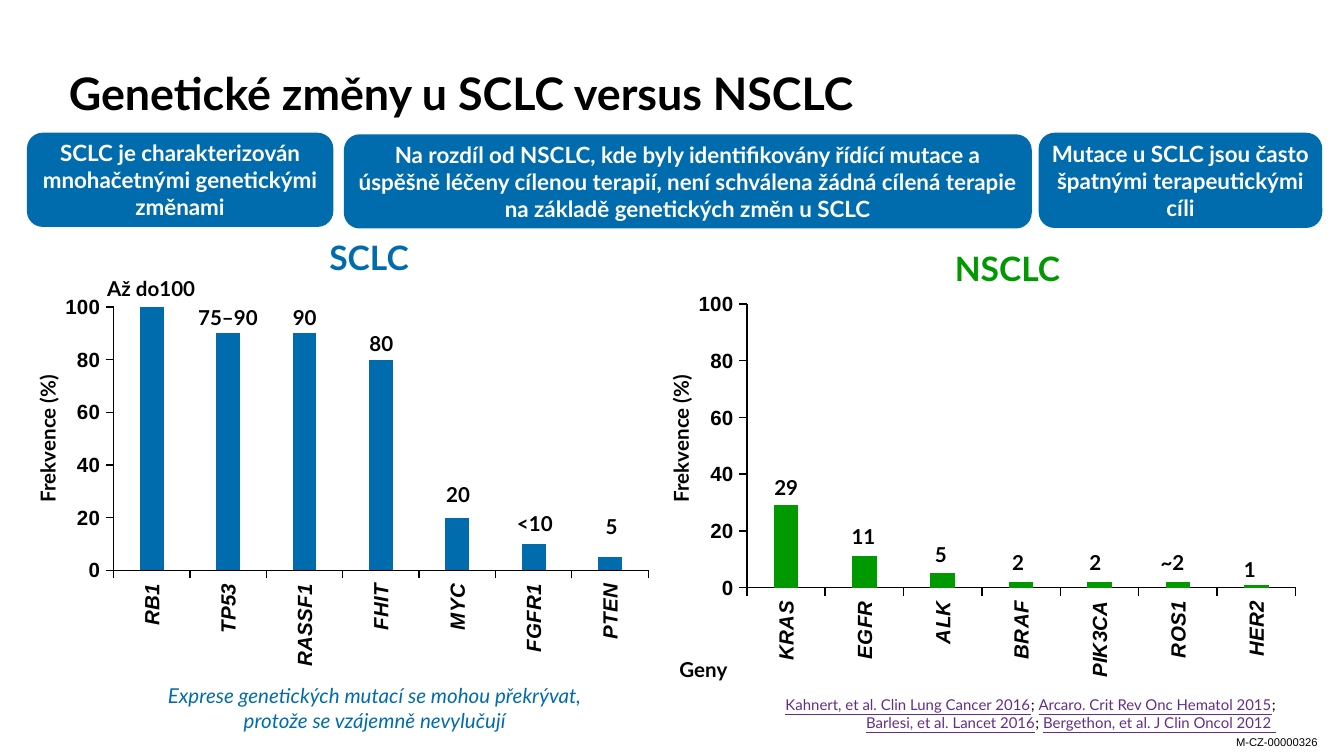
from lxml import etree
from pptx import Presentation
from pptx.chart.data import CategoryChartData
from pptx.dml.color import RGBColor
from pptx.enum import chart as ch, shapes, text
from pptx.oxml import parse_xml
from pptx.oxml.ns import nsdecls, qn
from pptx.util import Cm, Pt

BLUE = RGBColor(0x00, 0x6C, 0xAD)
GREEN = RGBColor(0x00, 0x99, 0x00)
PURPLE = RGBColor(0x64, 0x2D, 0x86)
BLACK = RGBColor(0, 0, 0)
WHITE = RGBColor(255, 255, 255)
CENTER, RIGHT = text.PP_ALIGN.CENTER, text.PP_ALIGN.RIGHT
MIDDLE, BOTTOM = text.MSO_ANCHOR.MIDDLE, text.MSO_ANCHOR.BOTTOM

# Content; every box is left, top, width, height in cm
TITLE = "Genetické změny u SCLC versus NSCLC"
MESSAGES = [
    ("SCLC je charakterizován mnohačetnými genetickými změnami",
     (0.51, 2.51, 5.79, 1.78)),
    ("Na rozdíl od NSCLC, kde byly identifikovány řídící mutace a úspěšně "
     "léčeny cílenou terapií, není schválena žádná cílená terapie na základě "
     "genetických změn u SCLC", (6.5, 2.54, 13, 1.78)),
    ("Mutace u SCLC jsou často špatnými terapeutickými cíli",
     (19.63, 2.51, 5.36, 1.8)),
]
# genes: name, frequency, label, label top, label width
PANELS = [
    dict(name="SCLC", color=BLUE, heading=(1.91, 4.34, 10.13, 1.02),
         chart=(0.94, 5.51, 11.71, 7.16), plot=(0.103, 0.041, 0.863, 0.695),
         axis_title=(-1.3, 7.92, 4.39, 0.74), first_center=2.86, step=1.45,
         genes=[("RB1", 100, "Až do100", 5.08, 2.21),
                ("TP53", 90, "75–90", 5.64, 2.21),
                ("RASSF1", 90, "90", 5.64, 2.21),
                ("FHIT", 80, "80", 6.12, 2.21),
                ("MYC", 20, "20", 8.99, 2.21),
                ("FGFR1", 10, "<10", 9.53, 2.21),
                ("PTEN", 5, "5", 9.58, 2.21)]),
    dict(name="NSCLC", color=GREEN, heading=(14.38, 4.55, 9.32, 1.02),
         chart=(12.95, 5.38, 11.76, 7.59), plot=(0.099, 0.048, 0.882, 0.707),
         axis_title=(10.67, 7.92, 4.39, 0.74), first_center=14.86, step=1.46,
         genes=[("KRAS", 29, "29", 8.84, 1.32),
                ("EGFR", 11, "11", 9.78, 2.21),
                ("ALK", 5, "5", 10.11, 1.09),
                ("BRAF", 2, "2", 10.26, 2.21),
                ("PIK3CA", 2, "2", 10.26, 2.21),
                ("ROS1", 2, "~2", 10.26, 2.21),
                ("HER2", 1, "1", 10.39, 0.86)]),
]
NOTE = ("Exprese genetických mutací se mohou překrývat, "
        "protože se vzájemně nevylučují")
# Each line alternates citation and separator
REFERENCES = [
    ["Kahnert, et al. Clin Lung Cancer 2016", "; ",
     "Arcaro. Crit Rev Onc Hematol 2015", ";"],
    ["Barlesi, et al. Lancet 2016", "; ",
     "Bergethon, et al. J Clin Oncol 2012 "],
]

prs = Presentation()
prs.slide_width, prs.slide_height = Cm(25.4), Cm(14.29)
slide = prs.slides.add_slide(prs.slide_layouts[5])


def set_frame(frame, margins, anchor, wrap=True):
    frame.word_wrap = wrap
    frame.vertical_anchor = anchor
    frame.margin_left = frame.margin_right = Cm(margins[0])
    frame.margin_top = frame.margin_bottom = Cm(margins[1])


def add_run(paragraph, words, size, color=BLACK, bold=False, italic=False,
            underline=False, font="Lato"):
    run = paragraph.add_run()
    run.text = words
    run.font.name, run.font.size = font, Pt(size)
    run.font.bold, run.font.italic = bold, italic
    run.font.underline = underline
    run.font.color.rgb = color


def add_label(words, box, size=11, color=BLACK, bold=True, italic=False,
              anchor=text.MSO_ANCHOR.TOP, wrap=True, font="Lato"):
    label = slide.shapes.add_textbox(*map(Cm, box))
    set_frame(label.text_frame, (0.25, 0.13), anchor, wrap)
    paragraph = label.text_frame.paragraphs[0]
    paragraph.alignment = CENTER
    add_run(paragraph, words, size, color, bold, italic, font=font)
    return label


def add_gene_chart(panel):
    data = CategoryChartData()
    data.categories = [gene[0] for gene in panel["genes"]]
    data.add_series("Series 1", [gene[1] for gene in panel["genes"]])
    chart = slide.shapes.add_chart(ch.XL_CHART_TYPE.COLUMN_CLUSTERED,
                                   *map(Cm, panel["chart"]), data).chart
    chart.has_legend = chart.has_title = False
    chart.font.name, chart.font.size = "Arial", Pt(11)
    chart.font.bold = True
    chart.font.color.rgb = BLACK

    bars = chart.plots[0]
    bars.gap_width, bars.overlap = 219, -27
    bars.vary_by_categories = False
    fill = bars.series[0].format.fill
    fill.solid()
    fill.fore_color.rgb = panel["color"]

    frequency, genes = chart.value_axis, chart.category_axis
    for axis in (frequency, genes):
        axis.has_major_gridlines = False
        axis.major_tick_mark = ch.XL_TICK_MARK.OUTSIDE
        axis.format.line.color.rgb = BLACK
        axis.format.line.width = Pt(0.75)
        labels = axis.tick_labels.font
        labels.name, labels.size, labels.bold = "Arial", Pt(11), True
        labels.color.rgb = BLACK
    frequency.minimum_scale, frequency.maximum_scale = 0, 100
    frequency.major_unit = 20
    genes.tick_labels.font.italic = True

    # Upright gene names and a fixed inner plot area
    chart_xml = chart.element
    body = chart_xml.find(".//" + qn("c:catAx")).find(".//" + qn("a:bodyPr"))
    body.set("rot", "-5400000")
    body.set("vert", "horz")
    plot_area = chart_xml.find(".//" + qn("c:plotArea"))
    for old in plot_area.findall(qn("c:layout")):
        plot_area.remove(old)
    layout = parse_xml(f"<c:layout {nsdecls('c')}><c:manualLayout/></c:layout>")
    settings = [("layoutTarget", "inner"), ("xMode", "edge"), ("yMode", "edge"),
                *zip("xywh", panel["plot"])]
    for tag, value in settings:
        etree.SubElement(layout[0], qn("c:" + tag)).set("val", str(value))
    plot_area.insert(0, layout)


# Title
title = slide.shapes.title
title.left, title.top, title.width, title.height = map(
    Cm, (1.3, 0.53, 22.81, 1.73))
set_frame(title.text_frame, (0, 0), BOTTOM)
title.text_frame.paragraphs[0].alignment = text.PP_ALIGN.LEFT
add_run(title.text_frame.paragraphs[0], TITLE, 24, bold=True)

# Charts with headings, axis titles and value labels
for panel in PANELS:
    add_gene_chart(panel)
    add_label(panel["name"], panel["heading"], 18, panel["color"])
    add_label("Frekvence (%)", panel["axis_title"], anchor=MIDDLE).rotation = 270
    for i, (_, _, label, top, width) in enumerate(panel["genes"]):
        center = panel["first_center"] + i * panel["step"]
        add_label(label, (center - width / 2, top, width, 0.74))
add_label("Geny", (11.1, 12.29, 4.39, 0.74), anchor=MIDDLE)

# Key messages
for message, box in MESSAGES:
    banner = slide.shapes.add_shape(shapes.MSO_SHAPE.ROUNDED_RECTANGLE,
                                    *map(Cm, box))
    banner.shadow.inherit = False
    banner.fill.solid()
    banner.fill.fore_color.rgb = BLUE
    banner.line.fill.background()
    set_frame(banner.text_frame, (0.13, 0.13), MIDDLE)
    banner.text_frame.paragraphs[0].alignment = CENTER
    add_run(banner.text_frame.paragraphs[0], message, 12, WHITE, bold=True)

# Note, references and document code
add_label(NOTE, (2.87, 12.78, 8.43, 1.22), color=BLUE, bold=False, italic=True)
references = slide.shapes.add_textbox(*map(Cm, (10.19, 13.21, 13.92, 0.61)))
frame = references.text_frame
set_frame(frame, (0, 0), BOTTOM)
for i, line in enumerate(REFERENCES):
    paragraph = frame.add_paragraph() if i else frame.paragraphs[0]
    paragraph.alignment = RIGHT
    for j, words in enumerate(line):
        cited = j % 2 == 0
        add_run(paragraph, words, 8, PURPLE if cited else BLACK,
                underline=cited)
add_label("M-CZ-00000326", (23.09, 13.77, 2.08, 0.51), 6, bold=False,
          wrap=False, font="Arial")

prs.save("out.pptx")
